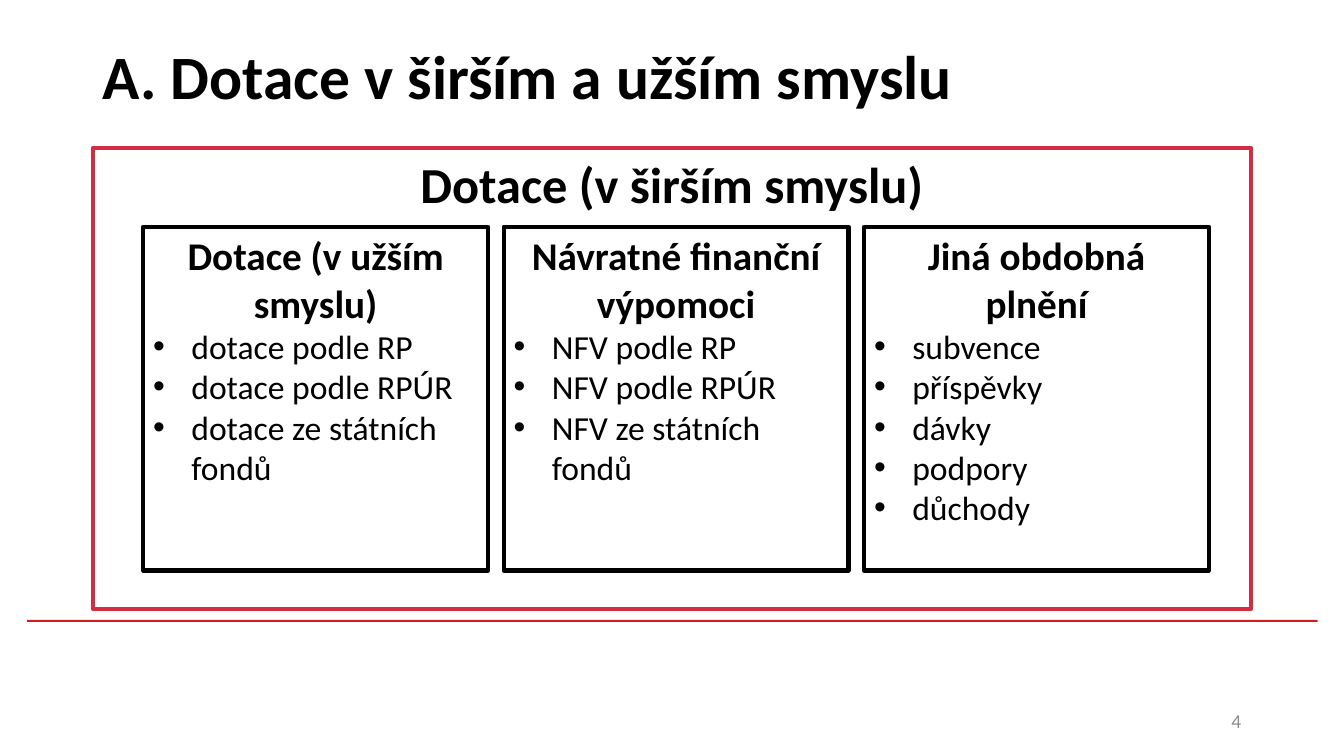
import pptx
import pptx.dml.color
import pptx.enum.shapes
import pptx.enum.text
import pptx.util
import lxml.etree

Inches = pptx.util.Inches
ALIGN = pptx.enum.text.PP_ALIGN
ANCHOR = pptx.enum.text.MSO_ANCHOR

WIDTH, HEIGHT = 13.33, 7.5
MARGIN = 0.92
CONTENT_WIDTH = WIDTH - 2 * MARGIN
COLUMN_LEFT, COLUMN_WIDTH, COLUMN_PITCH = 1.42, 3.42, 3.575
BULLET_INDENT = 0.38

KINDS = [
    ("Dotace (v užším smyslu)",
     ["dotace podle RP", "dotace podle RPÚR", "dotace ze státních fondů"]),
    ("Návratné finanční výpomoci",
     ["NFV podle RP", "NFV podle RPÚR", "NFV ze státních fondů"]),
    ("Jiná obdobná plnění",
     ["subvence", "příspěvky", "dávky", "podpory", "důchody"]),
]


def add_box(left, top, width, height, anchor=ANCHOR.TOP, fill=None, line=None):
    """Add a rectangle; without a fill or line colour that part is not drawn."""
    box = page.shapes.add_shape(
        pptx.enum.shapes.MSO_SHAPE.RECTANGLE,
        Inches(left), Inches(top), Inches(width), Inches(height))
    box.shadow.inherit = False
    if fill:
        box.fill.solid()
        box.fill.fore_color.rgb = pptx.dml.color.RGBColor.from_string(fill)
    else:
        box.fill.background()
    if line:
        box.line.color.rgb = pptx.dml.color.RGBColor.from_string(line)
        box.line.width = pptx.util.Pt(3)
    else:
        box.line.fill.background()
    box.text_frame.word_wrap = True
    box.text_frame.vertical_anchor = anchor
    return box


def write(para, text, size, align, bold=False, color="000000", bullet=False):
    para.alignment = align
    if bullet:
        props = para._p.get_or_add_pPr()
        props.set("marL", str(Inches(BULLET_INDENT)))
        props.set("indent", str(-Inches(BULLET_INDENT)))
        namespace = "{http://schemas.openxmlformats.org/drawingml/2006/main}"
        lxml.etree.SubElement(props, namespace + "buFont", typeface="Arial")
        lxml.etree.SubElement(props, namespace + "buChar", char="•")
    span = para.add_run()
    span.text = text
    span.font.name = "Calibri"
    span.font.size = pptx.util.Pt(size)
    span.font.bold = bold
    span.font.color.rgb = pptx.dml.color.RGBColor.from_string(color)


deck = pptx.Presentation()
deck.slide_width, deck.slide_height = Inches(WIDTH), Inches(HEIGHT)
page = deck.slides.add_slide(deck.slide_layouts[6])

# Footer rule, title and page number
add_box(0.27, 6.15, 12.8, 0.02, fill="CD1F21")
title = add_box(MARGIN, 0.02, CONTENT_WIDTH, 1.45, ANCHOR.MIDDLE)
write(title.text_frame.paragraphs[0], "A. Dotace v širším a užším smyslu",
      44, ALIGN.LEFT, bold=True)
number = add_box(WIDTH - MARGIN - 3, 6.95, 3, 0.4, ANCHOR.MIDDLE)
write(number.text_frame.paragraphs[0], "4", 14, ALIGN.RIGHT, color="8C8C8C")

# Wider sense, enclosing the three kinds
wider = add_box(MARGIN, 1.47, CONTENT_WIDTH, 4.57, fill="FFFFFF", line="D22D40")
write(wider.text_frame.paragraphs[0], "Dotace (v širším smyslu)",
      36, ALIGN.CENTER, bold=True)

for column, (heading, items) in enumerate(KINDS):
    kind = add_box(COLUMN_LEFT + column * COLUMN_PITCH, 2.25, COLUMN_WIDTH, 3.41,
                   fill="FFFFFF", line="000000")
    write(kind.text_frame.paragraphs[0], heading, 28, ALIGN.CENTER, bold=True)
    for item in items:
        write(kind.text_frame.add_paragraph(), item, 24, ALIGN.LEFT, bullet=True)

deck.save("out.pptx")
